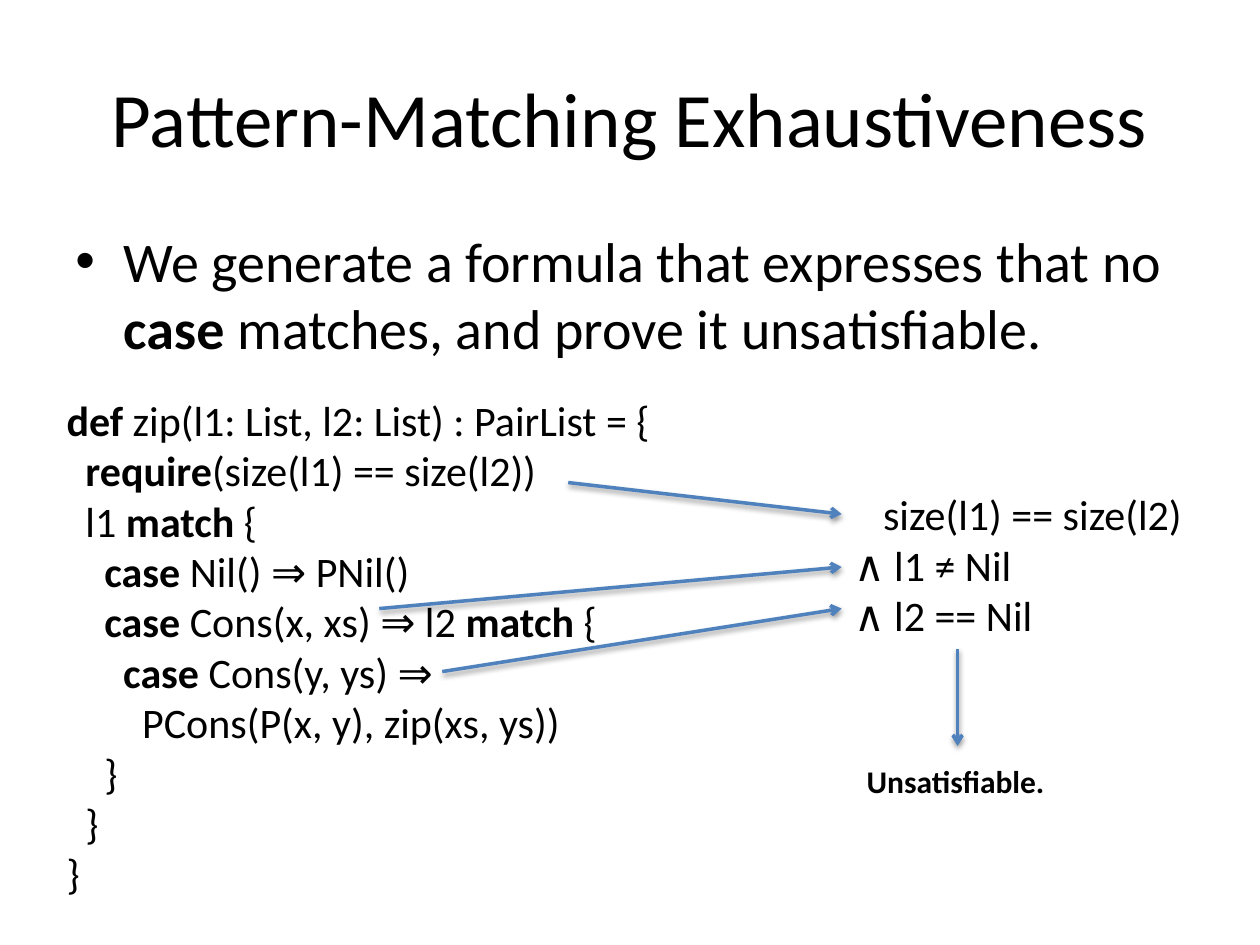
"""Build the slide on pattern-matching exhaustiveness."""
from dataclasses import dataclass

from lxml import etree
from pptx import Presentation
from pptx import util as u
from pptx.dml import color
from pptx.enum import shapes, text
from pptx.oxml import ns


@dataclass(frozen=True)
class Theme:
    font: str = "Calibri"
    ink: color.RGBColor = color.RGBColor(0x00, 0x00, 0x00)
    arrow: color.RGBColor = color.RGBColor(0x4F, 0x81, 0xBD)
    title: int = 44
    claim: int = 32
    code: int = 24
    verdict: int = 18
    code_step: float = 0.15
    formula_indent: float = 0.23


THEME = Theme()

CODE = [
    (0, "*def* zip(l1: List, l2: List) : PairList = {"),
    (1, "*require*(size(l1) == size(l2))"),
    (1, "l1 *match* {"),
    (2, "*case* Nil() ⇒ PNil()"),
    (2, "*case* Cons(x, xs) ⇒ l2 *match* {"),
    (3, "*case* Cons(y, ys) ⇒"),
    (4, "PCons(P(x, y), zip(xs, ys))"),
    (2, "}"),
    (1, "}"),
    (0, "}"),
]
FORMULA = [(1, "size(l1) == size(l2)"), (0, "∧ l1 ≠ Nil"), (0, "∧ l2 == Nil")]
CODE_TO_FORMULA = [
    ((4.51, 3.83), (6.68, 4.08)),
    ((3.01, 4.83), (6.68, 4.5)),
    ((3.51, 5.33), (6.68, 4.83)),
]


def add_runs(paragraph, marked, size):
    """Add text run by run, with the parts between asterisks in bold."""
    for index, part in enumerate(marked.split("*")):
        if part:
            run = paragraph.add_run()
            run.text = part
            run.font.name = THEME.font
            run.font.size = u.Pt(size)
            run.font.bold = index % 2 == 1
            run.font.color.rgb = THEME.ink


def indent(paragraph, left, first=0):
    """Set the left margin and first-line indent of a paragraph."""
    properties = paragraph._p.get_or_add_pPr()
    properties.set("marL", str(u.Inches(left)))
    properties.set("indent", str(u.Inches(first)))
    return properties


def place(shape, box):
    """Move and size a shape, in inches."""
    shape.left, shape.top, shape.width, shape.height = map(u.Inches, box)


def add_title(slide, heading):
    """Fill and format the title placeholder."""
    title = slide.shapes.title
    place(title, (0.5, 0.3, 9, 1.25))
    title.text_frame.vertical_anchor = text.MSO_ANCHOR.MIDDLE
    paragraph = title.text_frame.paragraphs[0]
    paragraph.alignment = text.PP_ALIGN.CENTER
    add_runs(paragraph, heading, THEME.title)


def add_bullet(slide, box, marked):
    """Add a wrapped text box with one bulleted paragraph."""
    frame = slide.shapes.add_textbox(*map(u.Inches, box)).text_frame
    frame.word_wrap = True
    paragraph = frame.paragraphs[0]
    paragraph.space_before = u.Pt(6.4)
    properties = indent(paragraph, 0.38, -0.38)
    etree.SubElement(properties, ns.qn("a:buFont"), typeface="Arial")
    etree.SubElement(properties, ns.qn("a:buChar"), char="•")
    add_runs(paragraph, marked, THEME.claim)


def add_lines(owner, box, lines, size, step=0):
    """Add an unwrapped text box of lines, each indented by its level."""
    frame = owner.shapes.add_textbox(*map(u.Inches, box)).text_frame
    frame.word_wrap = False
    frame.auto_size = text.MSO_AUTO_SIZE.SHAPE_TO_FIT_TEXT
    for index, (level, marked) in enumerate(lines):
        paragraph = frame.add_paragraph() if index else frame.paragraphs[0]
        indent(paragraph, level * step)
        add_runs(paragraph, marked, size)


def add_arrow(owner, start, end):
    """Add a straight arrow with a soft shadow below it."""
    arrow = owner.shapes.add_connector(
        shapes.MSO_CONNECTOR.STRAIGHT, *map(u.Inches, start + end))
    arrow.line.color.rgb = THEME.arrow
    arrow.line.width = u.Pt(2)
    etree.SubElement(arrow.line._get_or_add_ln(), ns.qn("a:tailEnd"), type="arrow")
    effects = etree.SubElement(arrow._element.spPr, ns.qn("a:effectLst"))
    shadow = etree.SubElement(
        effects, ns.qn("a:outerShdw"), blurRad=str(u.Pt(3.1)),
        dist=str(u.Pt(1.6)), dir="5400000", rotWithShape="0")
    tint = etree.SubElement(shadow, ns.qn("a:srgbClr"), val=str(THEME.ink))
    etree.SubElement(tint, ns.qn("a:alpha"), val="38000")


def main():
    """Build and save the slide."""
    deck = Presentation()
    deck.slide_width, deck.slide_height = u.Inches(10), u.Inches(7.5)
    slide = deck.slides.add_slide(deck.slide_layouts.get_by_name("Title Only"))

    add_title(slide, "Pattern-Matching Exhaustiveness")
    add_bullet(slide, (0.5, 1.75, 9, 1.33),
               "We generate a formula that expresses that no *case* matches, "
               "and prove it unsatisfiable.")
    add_lines(slide, (0.43, 3.08, 4.87, 4.14), CODE, THEME.code, THEME.code_step)

    derivation = slide.shapes.add_group_shape()
    add_lines(derivation, (6.68, 3.83, 2.82, 1.72), FORMULA, THEME.code,
              THEME.formula_indent)
    for start, end in CODE_TO_FORMULA:
        add_arrow(derivation, start, end)

    add_arrow(slide, (7.6, 5.15), (7.6, 5.92))
    add_lines(slide, (6.78, 6, 1.63, 0.4), [(0, "*Unsatisfiable.*")], THEME.verdict)
    deck.save("out.pptx")


if __name__ == "__main__":
    main()
